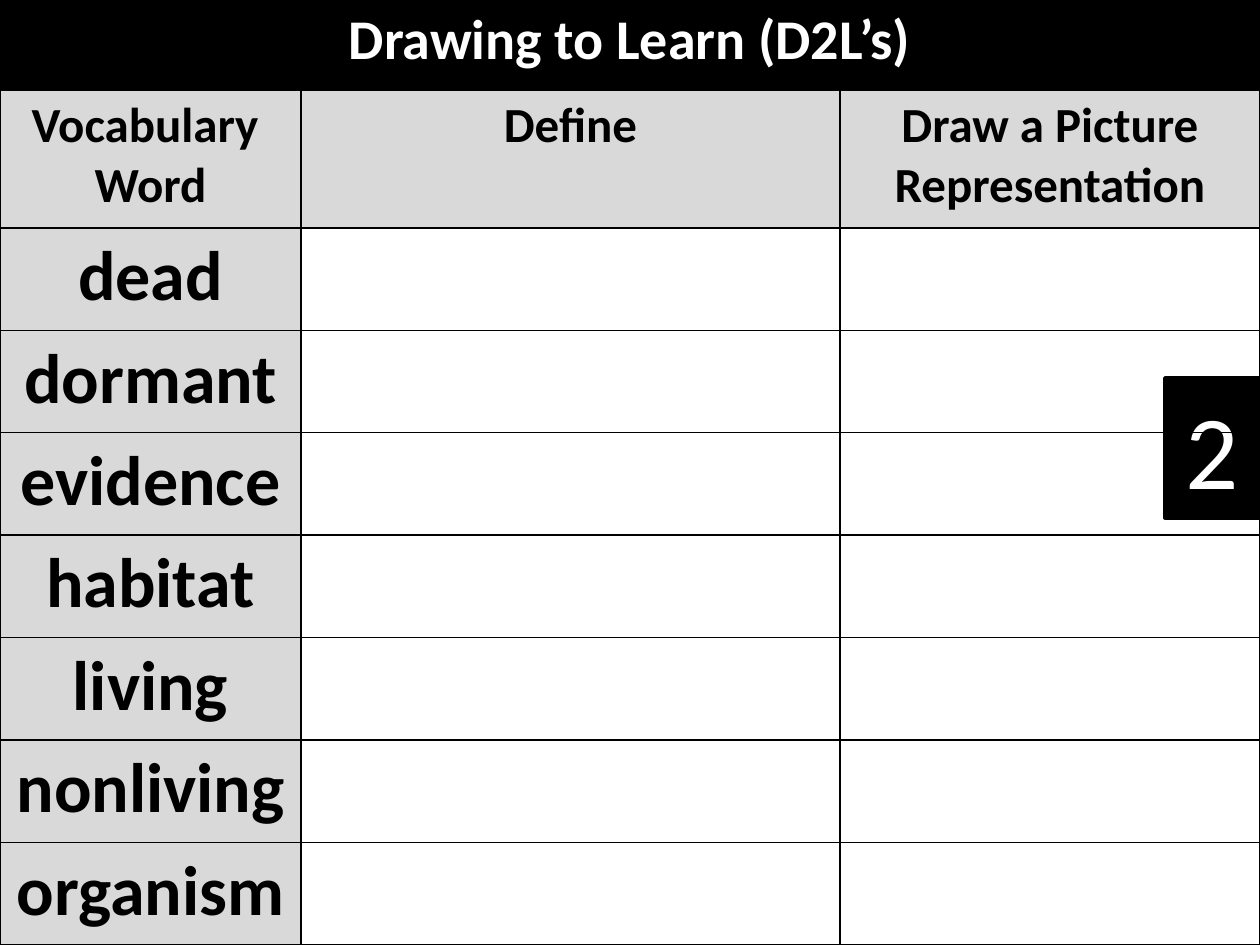
from lxml import etree
from pptx import Presentation
from pptx import util as u
from pptx.dml.color import RGBColor
from pptx.enum import shapes, text
from pptx.oxml.ns import qn

BLACK = RGBColor(0, 0, 0)
WHITE = RGBColor(255, 255, 255)
GRAY = RGBColor(0xD9, 0xD9, 0xD9)
FONT = "Calibri"

TITLE = "Drawing to Learn (D2L’s)"
HEADERS = [["Vocabulary ", "Word"], ["Define"], ["Draw a Picture Representation"]]
WORDS = ["dead", "dormant", "evidence", "habitat", "living", "nonliving", "organism"]
PAGE = "2"

W, H = 1260, 945
COLS = [301, 539, 420]
TITLE_H, HEADER_H = 90, 138
TAB_W, TAB_H, TAB_Y = 95, 140, 378


def px(n):
    return u.Emu(round(n * 914400 / 126))


def write(tf, lines, size, color, bold=True):
    for i, line in enumerate(lines):
        p = tf.paragraphs[0] if i == 0 else tf.add_paragraph()
        p.alignment = text.PP_ALIGN.CENTER
        r = p.add_run()
        r.text = line
        r.font.name = FONT
        r.font.size = u.Pt(size)
        r.font.bold = bold
        r.font.color.rgb = color


def add_borders(cell):
    tc_pr = cell._tc.get_or_add_tcPr()
    for side in ("a:lnL", "a:lnR", "a:lnT", "a:lnB"):
        ln = etree.SubElement(tc_pr, qn(side), w=str(u.Pt(1)))
        solid = etree.SubElement(ln, qn("a:solidFill"))
        etree.SubElement(solid, qn("a:srgbClr"), val=str(BLACK))


def paint(cell, color):
    cell.fill.solid()
    cell.fill.fore_color.rgb = color


prs = Presentation()
prs.slide_width, prs.slide_height = px(W), px(H)
s = prs.slides.add_slide(prs.slide_layouts[6])

tab = s.shapes.add_shape(shapes.MSO_SHAPE.RECTANGLE,
                         px(W - TAB_W), px(TAB_Y), px(TAB_W), px(TAB_H))
tab.shadow.inherit = False
tab.fill.solid()
tab.fill.fore_color.rgb = BLACK
tab.line.color.rgb = BLACK
tab.line.width = u.Pt(2)
write(tab.text_frame, [PAGE], 60, WHITE, bold=False)

table = s.shapes.add_table(len(WORDS) + 2, len(COLS), 0, 0, px(W), px(H)).table
table.first_row = table.horz_banding = False
for col, width in zip(table.columns, COLS):
    col.width = px(width)
word_h = (H - TITLE_H - HEADER_H) / len(WORDS)
for row, height in zip(table.rows, [TITLE_H, HEADER_H] + [word_h] * len(WORDS)):
    row.height = px(height)
for cell in table.iter_cells():
    add_borders(cell)
    cell.fill.background()

title = table.cell(0, 0)
title.merge(table.cell(0, len(COLS) - 1))
paint(title, BLACK)
write(title.text_frame, [TITLE], 32, WHITE)

for c, lines in enumerate(HEADERS):
    paint(table.cell(1, c), GRAY)
    write(table.cell(1, c).text_frame, lines, 28, BLACK)

for r, word in enumerate(WORDS, 2):
    paint(table.cell(r, 0), GRAY)
    write(table.cell(r, 0).text_frame, [word], 40, BLACK)

prs.save("out.pptx")
